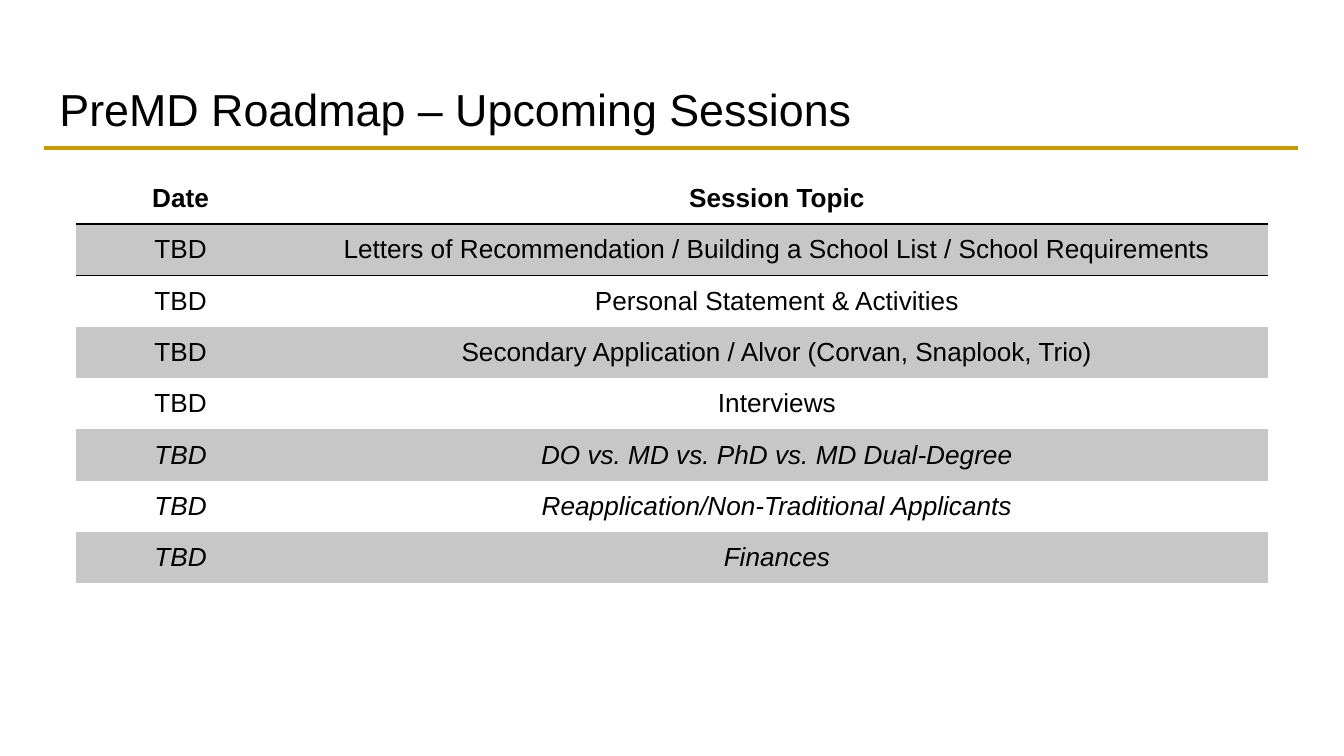
import pptx
import pptx.util
import pptx.dml.color
import pptx.enum.shapes
import pptx.enum.text
import pptx.oxml

Pt = pptx.util.Pt
MIDDLE = pptx.enum.text.MSO_ANCHOR.MIDDLE
CENTER = pptx.enum.text.PP_ALIGN.CENTER
NS = 'xmlns:a="http://schemas.openxmlformats.org/drawingml/2006/main"'
NO_GRID_STYLE = "{2D5ABB26-0587-4C30-8999-92F81FD0307C}"

COLORS = {"text": "000000", "rule": "CC9900", "band": "C7C7C7"}
FONT = "Arial"
TITLE = "PreMD Roadmap – Upcoming Sessions"
HEADER = ("Date", "Session Topic")
SESSIONS = [
    ("TBD", "Letters of Recommendation / Building a School List / School Requirements"),
    ("TBD", "Personal Statement & Activities"),
    ("TBD", "Secondary Application / Alvor (Corvan, Snaplook, Trio)"),
    ("TBD", "Interviews"),
]
OPTIONAL_SESSIONS = [
    ("TBD", "DO vs. MD vs. PhD vs. MD Dual-Degree"),
    ("TBD", "Reapplication/Non-Traditional Applicants"),
    ("TBD", "Finances"),
]
COL_WIDTHS = (112.5, 526.5)
ROW_HEIGHT = 27.5


def rgb(name):
    return pptx.dml.color.RGBColor.from_string(COLORS[name])


def add_run(p, text, size, bold=False, italic=False):
    r = p.add_run()
    r.text = text
    r.font.name = FONT
    r.font.size = Pt(size)
    r.font.bold = bold
    r.font.italic = italic
    r.font.color.rgb = rgb("text")


def add_border(cell, side):
    border = pptx.oxml.parse_xml(
        f'<a:{side} {NS} w="{Pt(1)}"><a:solidFill>'
        f'<a:srgbClr val="{COLORS["text"]}"/></a:solidFill></a:{side}>'
    )
    cell._tc.get_or_add_tcPr().insert(0, border)


prs = pptx.Presentation()
prs.slide_width, prs.slide_height = Pt(720), Pt(405)
s = prs.slides.add_slide(prs.slide_layouts[6])

rule = s.shapes.add_connector(
    pptx.enum.shapes.MSO_CONNECTOR.STRAIGHT, Pt(23.75), Pt(79.25), Pt(695.5), Pt(79.25)
)
rule.line.color.rgb = rgb("rule")
rule.line.width = Pt(2.25)
rule._element.spPr.append(pptx.oxml.parse_xml(f"<a:effectLst {NS}/>"))

title = s.shapes.add_textbox(Pt(24.75), Pt(35.25), Pt(671), Pt(45.5))
tf = title.text_frame
tf.word_wrap = True
tf.vertical_anchor = MIDDLE
tf.margin_left = tf.margin_right = tf.margin_top = tf.margin_bottom = Pt(7.2)
add_run(tf.paragraphs[0], TITLE, 24)

rows = [HEADER] + SESSIONS + OPTIONAL_SESSIONS
frame = s.shapes.add_table(
    len(rows), len(HEADER), Pt(40.5), Pt(92.5), Pt(sum(COL_WIDTHS)), Pt(ROW_HEIGHT * len(rows))
)
table = frame.table
table._tbl.tblPr.find(pptx.oxml.ns.qn("a:tableStyleId")).text = NO_GRID_STYLE
for column, width in zip(table.columns, COL_WIDTHS):
    column.width = Pt(width)

for i, row in enumerate(rows):
    table.rows[i].height = Pt(ROW_HEIGHT)
    for j, text in enumerate(row):
        cell = table.cell(i, j)
        cell.vertical_anchor = MIDDLE
        cell.margin_left = cell.margin_right = Pt(0.75)
        cell.margin_top = cell.margin_bottom = Pt(3.6)
        if i % 2:
            cell.fill.solid()
            cell.fill.fore_color.rgb = rgb("band")
        else:
            cell.fill.background()
        if i < 2:
            add_border(cell, "lnT" if i else "lnB")
        p = cell.text_frame.paragraphs[0]
        p.alignment = CENTER
        add_run(p, text, 14, bold=i == 0, italic=i > len(SESSIONS))

prs.save("out.pptx")
